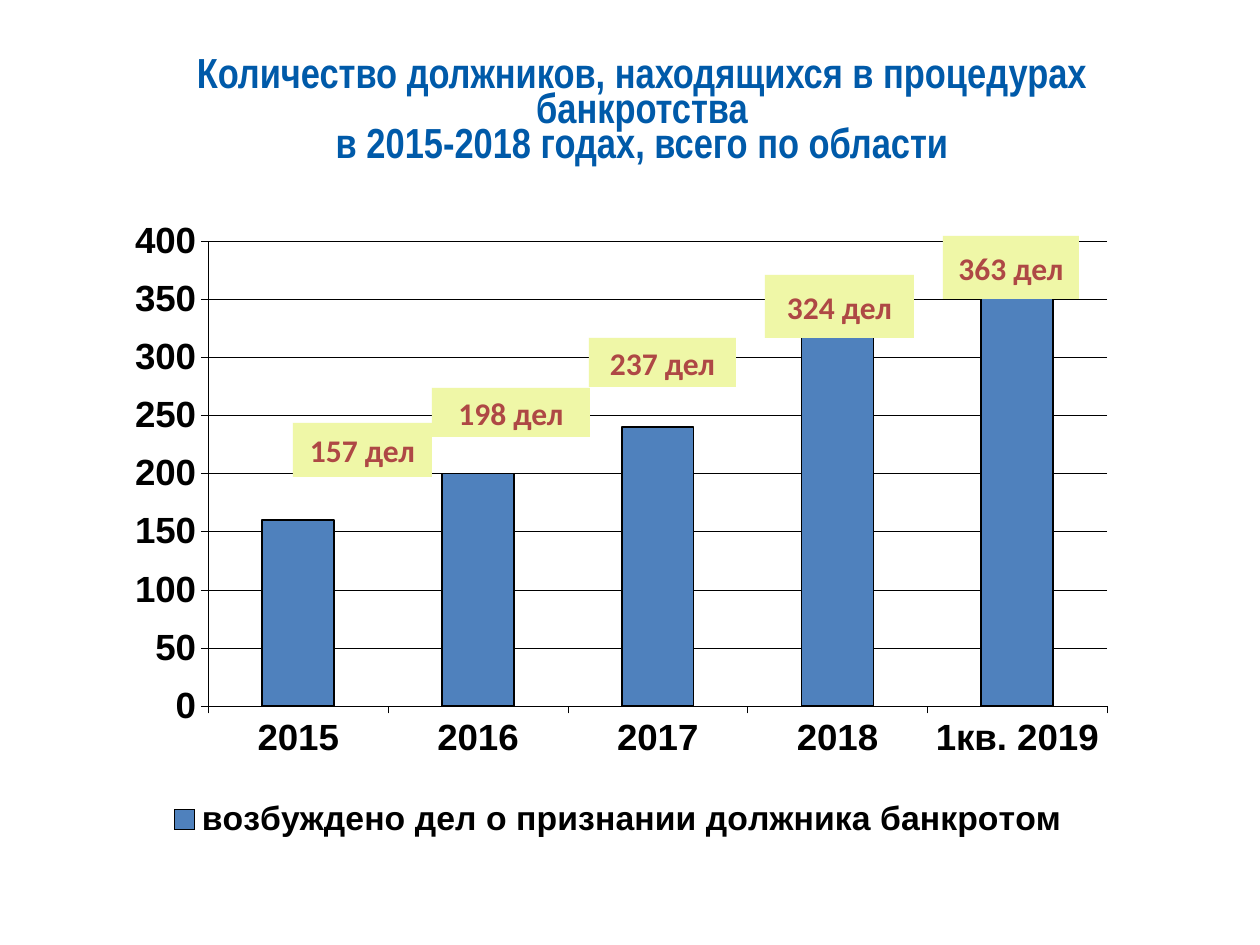
"""Build a slide with a column chart of bankruptcy cases by year."""
from lxml import etree
from pptx import Presentation
from pptx.chart.data import CategoryChartData
from pptx.dml.color import RGBColor
from pptx.enum.chart import XL_CHART_TYPE, XL_LEGEND_POSITION, XL_TICK_LABEL_POSITION, XL_TICK_MARK
from pptx.enum.shapes import MSO_SHAPE
from pptx.enum.text import MSO_ANCHOR, PP_ALIGN
from pptx.oxml.ns import qn
from pptx.util import Pt

STACKED = XL_CHART_TYPE.COLUMN_STACKED
BOTTOM = XL_LEGEND_POSITION.BOTTOM
LOW = XL_TICK_LABEL_POSITION.LOW
OUT, NONE = XL_TICK_MARK.OUTSIDE, XL_TICK_MARK.NONE
RECT = MSO_SHAPE.RECTANGLE
MIDDLE = MSO_ANCHOR.MIDDLE
CENTER = PP_ALIGN.CENTER
PX = 914400 // 126
BLACK = "000000"


def style(font, color, **form):
    font.color.rgb = RGBColor.from_string(color)
    for key, val in form.items():
        setattr(font, key, val)


def place(node, spot, target, box):
    for old in node.findall(qn("c:layout")):
        node.remove(old)
    layout = etree.Element(qn("c:layout"))
    manual = etree.SubElement(layout, qn("c:manualLayout"))
    parts = [("layoutTarget", target)] if target else []
    parts += [("xMode", "edge"), ("yMode", "edge"), *zip("xywh", box)]
    for tag, val in parts:
        etree.SubElement(manual, qn("c:" + tag)).set("val", str(val))
    node.insert(spot, layout)


prs = Presentation()
prs.slide_width, prs.slide_height = 1260 * PX, 945 * PX
slide = prs.slides.add_slide(prs.slide_layouts[6])

title = slide.shapes.add_textbox(75 * PX, 35 * PX, 1134 * PX, 158 * PX)
frame = title.text_frame
frame.word_wrap = True
frame.vertical_anchor = MIDDLE
para = frame.paragraphs[0]
para.text = "Количество должников, находящихся в процедурах банкротства\vв 2015-2018 годах, всего по области"
para.alignment = CENTER
para.line_spacing = Pt(20)
for run in para.runs:
    style(run.font, "005AA9", name="Arial Narrow", size=Pt(24), bold=True)

data = CategoryChartData()
data.categories = ["2015", "2016", "2017", "2018", "1кв. 2019"]
data.add_series("возбуждено дел о признании должника банкротом", [160, 200, 240, 320, 360])
chart = slide.shapes.add_chart(STACKED, 135 * PX, 221 * PX, 982 * PX, 636 * PX, data).chart
chart.has_title = False
style(chart.font, BLACK, name="Arial", size=Pt(21.1), bold=True)

cats, vals = chart.category_axis, chart.value_axis
cats.tick_label_position = LOW
vals.minimum_scale, vals.maximum_scale, vals.major_unit = 0, 400, 50
vals.has_major_gridlines = True
for axis in (cats, vals):
    axis.major_tick_mark, axis.minor_tick_mark = OUT, NONE
    style(axis.tick_labels.font, BLACK, name="Arial", size=Pt(21.1), bold=True)

plot = chart.plots[0]
plot.gap_width, plot.overlap, plot.vary_by_categories = 150, 100, False
bars = plot.series[0]
bars.format.fill.solid()
bars.format.fill.fore_color.rgb = RGBColor.from_string("4F81BD")
lines = [(cats, 0.23), (vals, 0.23), (vals.major_gridlines, 0.23), (bars, 0.92)]
for part, width in lines:
    part.format.line.color.rgb = RGBColor.from_string(BLACK)
    part.format.line.width = Pt(width)

chart.has_legend = True
legend = chart.legend
legend.position = BOTTOM
legend.include_in_layout = False
style(legend.font, BLACK, name="Arial", size=Pt(19.4), bold=True)
place(chart.element.find(".//" + qn("c:plotArea")), 0, "inner", (0.07, 0.02, 0.92, 0.74))
place(chart.element.find(".//" + qn("c:legend")), 1, None, (0.02, 0.9, 0.94, 0.08))

TAGS = [
    ("157 дел", 293, 423, 139, 54),
    ("363 дел", 943, 236, 136, 63),
    ("198 дел", 432, 388, 158, 49),
    ("237 дел", 589, 338, 147, 49),
    ("324 дел", 765, 275, 149, 63),
]
for text, *box in TAGS:
    tag = slide.shapes.add_shape(RECT, *(n * PX for n in box))
    tag.shadow.inherit = False
    tag.fill.solid()
    tag.fill.fore_color.rgb = RGBColor.from_string("EFF7A7")
    tag.line.fill.background()
    tag.text_frame.vertical_anchor = MIDDLE
    para = tag.text_frame.paragraphs[0]
    para.text = text
    para.alignment = CENTER
    style(para.runs[0].font, "AE4845", name="Calibri", size=Pt(18), bold=True)

prs.save("out.pptx")
